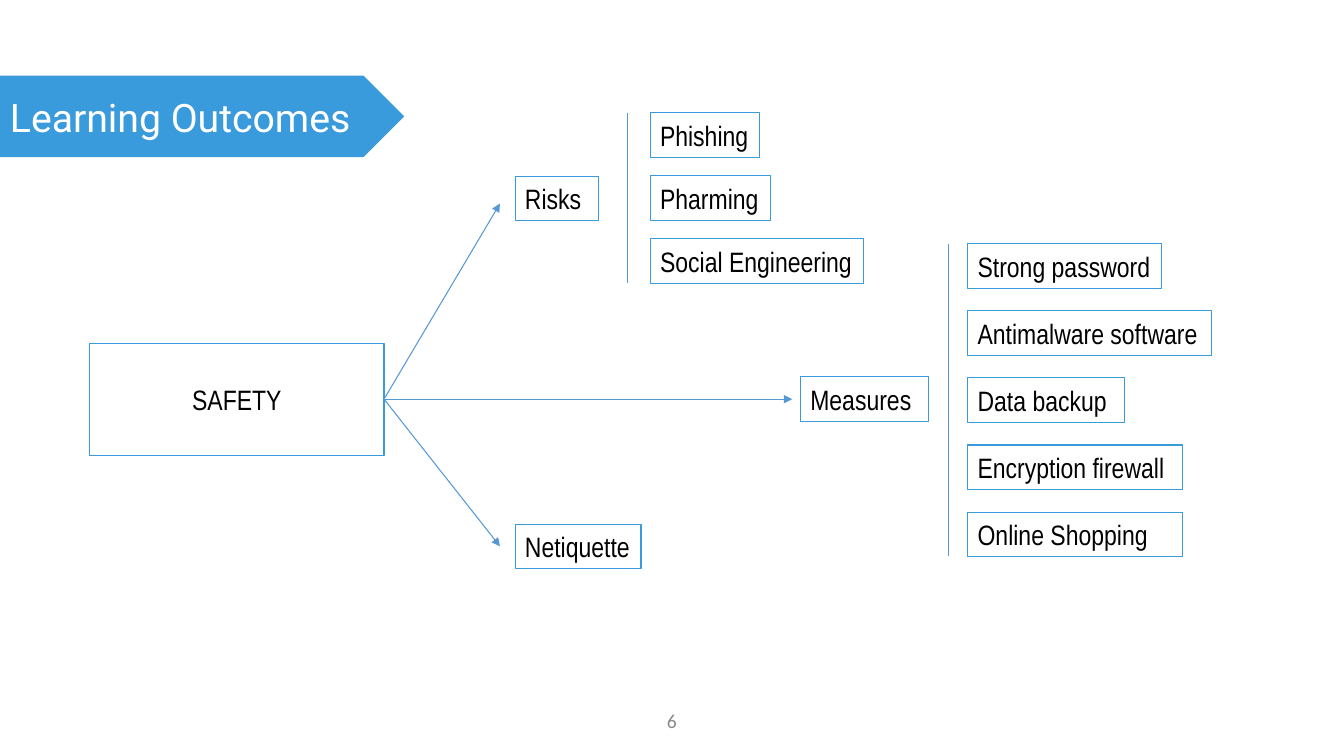
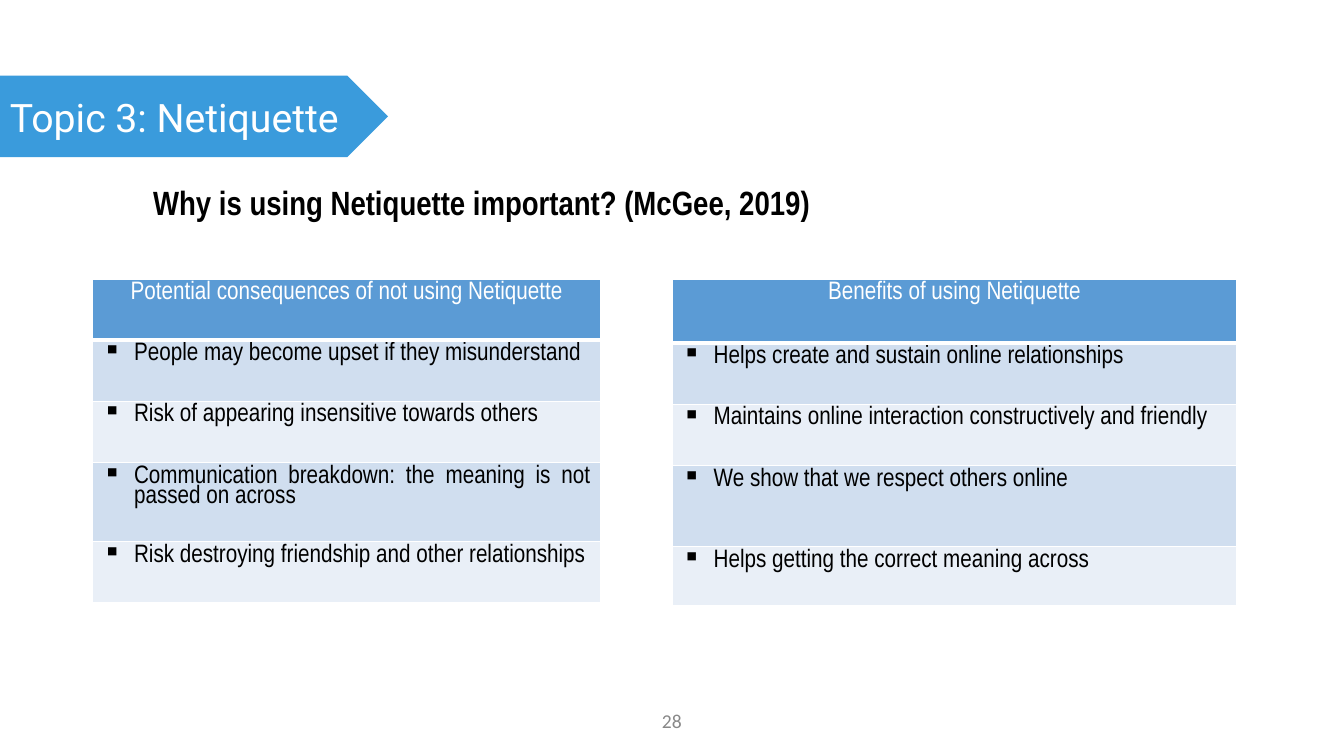
from dataclasses import dataclass

from lxml import etree
from pptx import Presentation
from pptx.dml.color import RGBColor
from pptx.enum.shapes import MSO_CONNECTOR, MSO_SHAPE
from pptx.enum.text import MSO_ANCHOR, PP_ALIGN
from pptx.oxml.ns import qn
from pptx.util import Inches, Pt

PENTAGON = MSO_SHAPE.PENTAGON
RECTANGLE = MSO_SHAPE.RECTANGLE
STRAIGHT = MSO_CONNECTOR.STRAIGHT
LEFT, CENTER, JUSTIFY = PP_ALIGN.LEFT, PP_ALIGN.CENTER, PP_ALIGN.JUSTIFY
TOP, MIDDLE = MSO_ANCHOR.TOP, MSO_ANCHOR.MIDDLE
RIGHT_SIDE = 3

COLUMNS, ROWS = 80, 45
LABEL_HEIGHT = 2.64


@dataclass(frozen=True)
class Theme:
    accent: str = "3A9BDC"
    connector: str = "5698D3"
    header: str = "5B9BD5"
    bands: tuple = ("D0DEEF", "E9EFF7")
    white: str = "FFFFFF"
    black: str = "000000"
    gray: str = "888888"
    title_font: str = "Roboto"
    body_font: str = "Arial Narrow"
    number_font: str = "Calibri"
    title_size: int = 28
    heading_size: int = 24
    label_size: int = 20
    table_size: int = 18
    number_size: int = 14
    line_width: float = 0.75


class Deck:
    """Draws on the current slide; lengths are grid columns and rows."""

    def __init__(self, theme):
        self.theme = theme
        self.presentation = Presentation()
        self.presentation.slide_width = Inches(13.33)
        self.presentation.slide_height = Inches(7.5)
        self.slide = None

    def across(self, columns):
        return round(self.presentation.slide_width * columns / COLUMNS)

    def down(self, rows):
        return round(self.presentation.slide_height * rows / ROWS)

    def frame(self, left, top, width, height):
        return (self.across(left), self.down(top),
                self.across(width), self.down(height))

    def set_text(self, paragraph, text, size, color, font=None, align=LEFT, bold=False):
        paragraph.text = text
        paragraph.alignment = align
        paragraph.font.name = font or self.theme.body_font
        paragraph.font.size = Pt(size)
        paragraph.font.bold = bold
        paragraph.font.color.rgb = RGBColor.from_string(color)

    def new_slide(self, title, banner_width, number):
        theme = self.theme
        blank = self.presentation.slide_layouts[6]
        self.slide = self.presentation.slides.add_slide(blank)
        banner = self.shape(PENTAGON, 0, 4.5, banner_width, 4.86, fill=theme.accent)
        self.set_text(banner.text_frame.paragraphs[0], title, theme.title_size,
                      theme.white, theme.title_font)
        self.text(number, 31, 41.7, 18, 2.4, theme.number_size, theme.gray,
                  font=theme.number_font, align=CENTER, anchor=MIDDLE)

    def shape(self, kind, left, top, width, height, fill=None, line=None):
        shape = self.slide.shapes.add_shape(kind, *self.frame(left, top, width, height))
        shape.shadow.inherit = False
        if fill:
            shape.fill.solid()
            shape.fill.fore_color.rgb = RGBColor.from_string(fill)
        else:
            shape.fill.background()
        if line:
            shape.line.color.rgb = RGBColor.from_string(line)
            shape.line.width = Pt(self.theme.line_width)
        else:
            shape.line.fill.background()
        shape.text_frame.word_wrap = True
        shape.text_frame.vertical_anchor = MIDDLE
        return shape

    def text(self, text, left, top, width, height, size, color, anchor=TOP, **style):
        box = self.slide.shapes.add_textbox(*self.frame(left, top, width, height))
        box.text_frame.word_wrap = True
        box.text_frame.vertical_anchor = anchor
        self.set_text(box.text_frame.paragraphs[0], text, size, color, **style)

    def label(self, text, left, top, width, height=LABEL_HEIGHT, align=LEFT, fill=None):
        label = self.shape(RECTANGLE, left, top, width, height, fill, self.theme.accent)
        if align == LEFT:
            label.text_frame.margin_right = 0
        self.set_text(label.text_frame.paragraphs[0], text, self.theme.label_size,
                      self.theme.black, align=align)
        return label

    def line(self, start, end, origin=None, arrow=False):
        """Draw a line; origin is a shape whose right side it leaves."""
        line = self.slide.shapes.add_connector(
            STRAIGHT, self.across(start[0]), self.down(start[1]),
            self.across(end[0]), self.down(end[1]))
        if origin is not None:
            line.begin_connect(origin, RIGHT_SIDE)
        line.line.color.rgb = RGBColor.from_string(self.theme.connector)
        line.line.width = Pt(self.theme.line_width)
        properties = line._element.spPr
        if arrow:
            outline = properties.find(qn("a:ln"))
            etree.SubElement(outline, qn("a:tailEnd"), type="triangle")
        etree.SubElement(properties, qn("a:effectLst"))

    def label_list(self, rail, left, top, pitch, items):
        """Stack labels at an equal pitch beside a vertical rail."""
        for index, (text, width) in enumerate(items):
            self.label(text, left, top + index * pitch, width)
        bottom = top + (len(items) - 1) * pitch + LABEL_HEIGHT
        self.line((rail, top), (rail, bottom))

    def bullet(self, paragraph):
        properties = paragraph._p.get_or_add_pPr()
        properties.set("marL", str(Inches(0.31)))
        properties.set("indent", str(-Inches(0.31)))
        etree.SubElement(properties, qn("a:buChar"), char="▪")

    def border(self, cell, side, width):
        properties = cell._tc.get_or_add_tcPr()
        line = etree.SubElement(properties, qn(f"a:ln{side}"), w=str(Pt(width)))
        fill = etree.SubElement(line, qn("a:solidFill"))
        etree.SubElement(fill, qn("a:srgbClr"), val=self.theme.white)

    def table(self, left, top, width, heights, header, points):
        theme = self.theme
        table = self.slide.shapes.add_table(
            len(heights), 1, *self.frame(left, top, width, sum(heights))).table
        for index, (height, text) in enumerate(zip(heights, [header, *points])):
            table.rows[index].height = self.down(height)
            cell = table.cell(index, 0)
            for side in "LRTB":
                under_header = (index, side) in ((0, "B"), (1, "T"))
                self.border(cell, side, 3 if under_header else 1)
            cell.fill.solid()
            fill = theme.bands[(index - 1) % 2] if index else theme.header
            cell.fill.fore_color.rgb = RGBColor.from_string(fill)
            paragraph = cell.text_frame.paragraphs[0]
            paragraph.line_spacing = 0.83
            if index:
                self.bullet(paragraph)
            self.set_text(paragraph, text, theme.table_size,
                          theme.black if index else theme.white,
                          align=JUSTIFY if index else CENTER)


def learning_outcomes(deck):
    deck.new_slide("Learning Outcomes", 24.06, "6")
    safety = deck.label("SAFETY", 5.34, 20.43, 17.52, 6.66, CENTER, deck.theme.white)
    for end in ((29.76, 12.12), (47.16, 23.76), (29.76, 32.52)):
        deck.line((22.86, 23.76), end, origin=safety, arrow=True)
    deck.label("Risks", 30.66, 10.5, 4.98)
    deck.label("Measures", 47.64, 22.44, 7.62)
    deck.label("Netiquette", 30.66, 31.2, 7.5)
    deck.label_list(37.38, 38.7, 6.72, 3.75, [
        ("Phishing", 6.54), ("Pharming", 7.14), ("Social Engineering", 12.72)])
    deck.label_list(56.46, 57.6, 14.52, 3.99, [
        ("Strong password", 11.52), ("Antimalware software", 14.52),
        ("Data backup", 9.36), ("Encryption firewall", 12.78),
        ("Online Shopping", 12.78)])


def netiquette(deck):
    deck.new_slide("Topic 3: Netiquette", 23.1, "28")
    deck.text("Why is using Netiquette important? (McGee, 2019)", 8.52, 10.56, 66, 3,
              deck.theme.heading_size, deck.theme.black, bold=True)
    deck.table(5.52, 16.62, 30.24, (3.6, 3.66, 3.66, 4.68, 3.66),
               "Potential consequences of not using Netiquette", [
                   "People may become upset if they misunderstand",
                   "Risk of appearing insensitive towards others",
                   "Communication breakdown: the meaning is not passed on across",
                   "Risk destroying friendship and other relationships"])
    deck.table(40.02, 16.62, 33.6, (3.78, 3.66, 3.66, 4.8, 3.54),
               "Benefits of using Netiquette", [
                   "Helps create and sustain online relationships",
                   "Maintains online interaction constructively and friendly",
                   "We show that we respect others online",
                   "Helps getting the correct meaning across"])


def main():
    deck = Deck(Theme())
    learning_outcomes(deck)
    netiquette(deck)
    deck.presentation.save("out.pptx")


if __name__ == "__main__":
    main()
